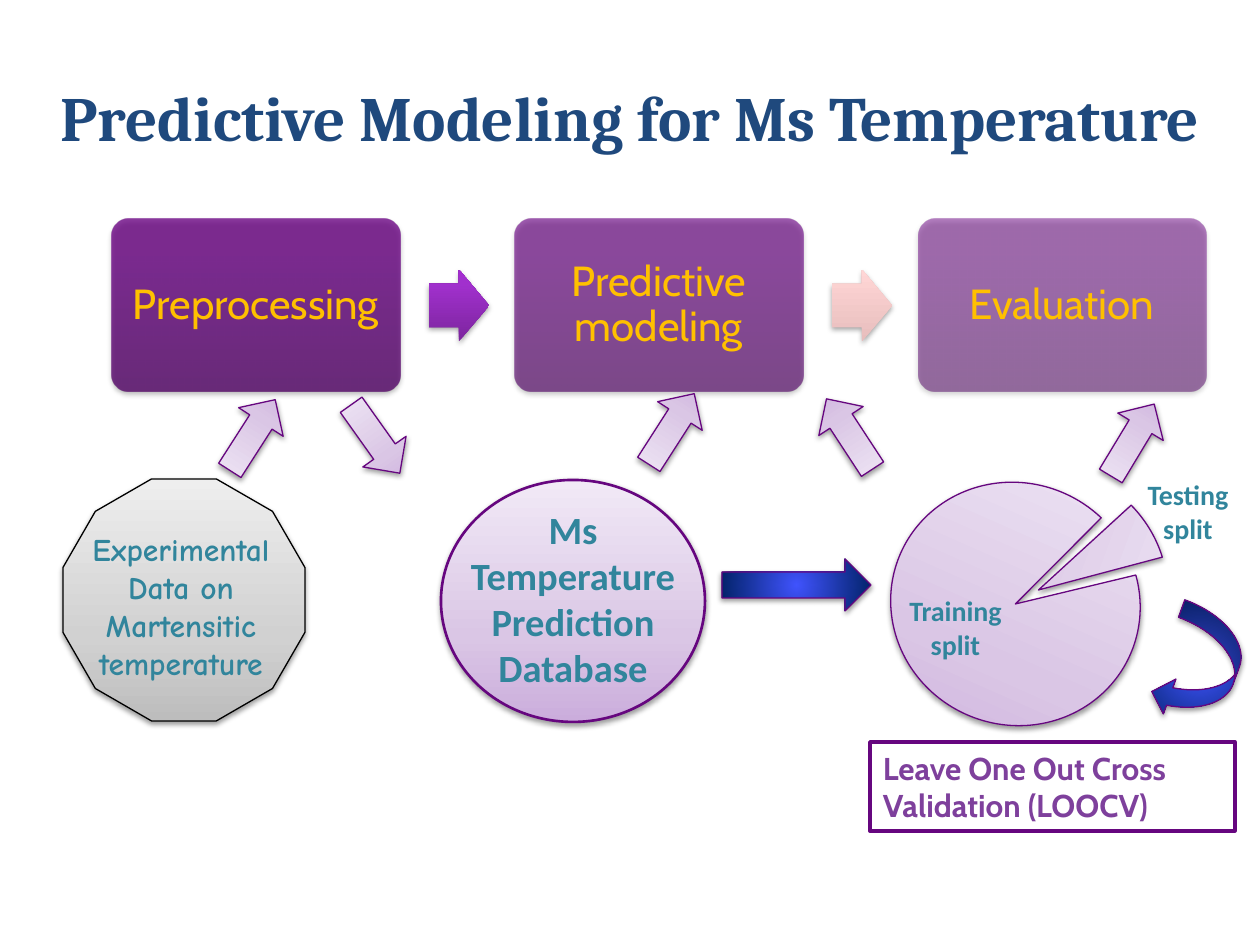
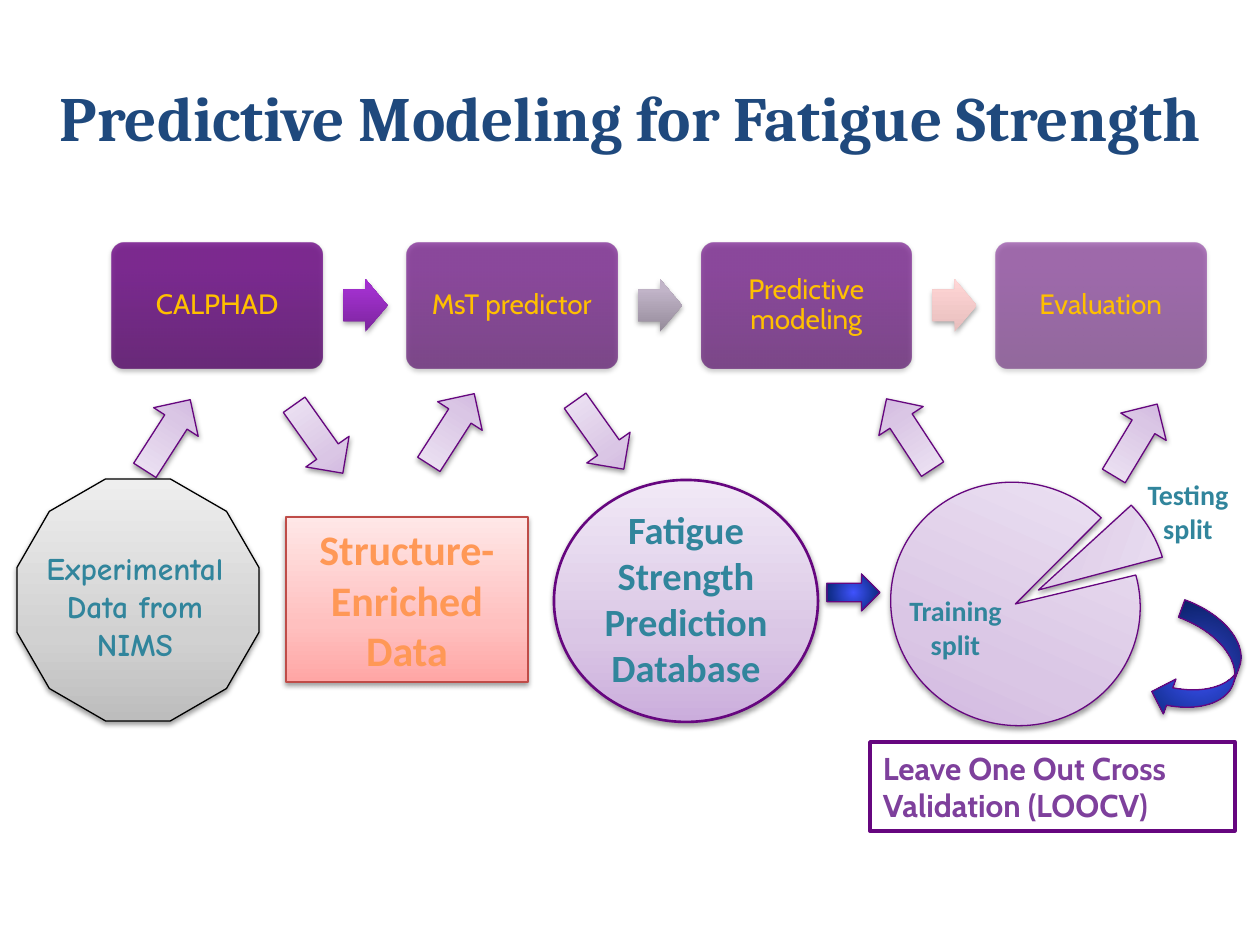
from pptx import Presentation
from pptx import util as u
from pptx.dml.color import RGBColor
from pptx.enum import shapes, text
from pptx.oxml import parse_xml
from pptx.oxml.ns import nsdecls, qn

EMU_PER_PX = 914400 / 126
WIDTH, HEIGHT = 1260, 945

NAVY = RGBColor(0x1F, 0x49, 0x7D)
GOLD = RGBColor(0xFF, 0xC0, 0x00)
TEAL = RGBColor(0x31, 0x85, 0x9C)
ORANGE = RGBColor(0xFF, 0x98, 0x56)
VIOLET = RGBColor(0x7E, 0x40, 0x9C)
PLUM = RGBColor(0x66, 0x06, 0x7F)
BRICK = RGBColor(0xBF, 0x4C, 0x48)
BLACK = RGBColor(0x00, 0x00, 0x00)
WHITE = RGBColor(0xFF, 0xFF, 0xFF)


def stops(**shades):
    return [(int(place[1:]), RGBColor.from_string(shade)) for place, shade in shades.items()]


CARD = stops(_0="510065", _80="690084", _100="690084")
PURPLE = stops(_0="7C259E", _80="A130CD", _100="A42DD1")
MAUVE = stops(_0="958B9A", _80="C1B4C8", _100="C2B5CA")
PINK = stops(_0="E8BEBD", _100="FFD6D6")
LILAC = stops(_0="CBADDC", _35="DAC6E5", _100="F1E9F6")
SILVER = stops(_0="BDBDBD", _35="D1D1D1", _100="EEEEEE")
ROSE = stops(_0="FFA6A5", _35="FFC0BF", _100="FFE7E7")
BLUE = stops(_0="4053FD", _100="002164")

UP, UP_STEEP, DOWN, BACK = 212.7, 211.1, 324.6, 146.8
FORM = shapes.MSO_SHAPE
CENTER, LEFT = text.PP_ALIGN.CENTER, text.PP_ALIGN.LEFT


def px(length):
    return u.Emu(round(length * EMU_PER_PX))


def write(frame, words, *, size, font, color, bold=True, align=CENTER,
          spacing=None, inset=(13, 6)):
    frame.word_wrap = True
    frame.vertical_anchor = text.MSO_ANCHOR.MIDDLE
    frame.margin_left = frame.margin_right = px(inset[0])
    frame.margin_top = frame.margin_bottom = px(inset[1])
    frame.text = words
    for paragraph in frame.paragraphs:
        paragraph.alignment = align
        if spacing:
            paragraph.line_spacing = spacing
        paragraph.font.size = u.Pt(size)
        paragraph.font.name = font
        paragraph.font.bold = bold
        paragraph.font.color.rgb = color


def label(slide, box, words, **style):
    frame = slide.shapes.add_textbox(*map(px, box)).text_frame
    write(frame, words, **style)


def shade(shape, gradient, opacity, radial):
    alpha = f'<a:alpha val="{opacity * 1000}"/>' if opacity < 100 else ""
    marks = "".join(
        f'<a:gs pos="{place * 1000}"><a:srgbClr val="{color}">{alpha}</a:srgbClr></a:gs>'
        for place, color in gradient)
    middle = '<a:fillToRect l="50000" t="50000" r="50000" b="50000"/>'
    course = (f'<a:path path="circle">{middle}</a:path>' if radial
              else '<a:lin ang="16200000" scaled="0"/>')
    shape.fill.background()
    properties = shape._element.spPr
    properties.replace(properties.find(qn("a:noFill")), parse_xml(
        f'<a:gradFill {nsdecls("a")} rotWithShape="1"><a:gsLst>{marks}</a:gsLst>{course}</a:gradFill>'))


def cast_shadow(shape, opacity):
    shape._element.spPr.find(qn("a:effectLst")).append(parse_xml(
        f'<a:outerShdw {nsdecls("a")} blurRad="{u.Pt(3.1)}" dist="{u.Pt(1.6)}" dir="5400000" '
        f'rotWithShape="0"><a:srgbClr val="{BLACK}"><a:alpha val="{opacity * 1000}"/>'
        '</a:srgbClr></a:outerShdw>'))


def draw(slide, form, box, fill, *, line=PLUM, weight=0.75, turn=0, adjust=(),
         opacity=100, radial=False, shadow=38):
    shape = slide.shapes.add_shape(form, *map(px, box))
    shape.rotation = turn
    for index, value in enumerate(adjust):
        shape.adjustments[index] = value
    if isinstance(fill, RGBColor):
        shape.fill.solid()
        shape.fill.fore_color.rgb = fill
    else:
        shade(shape, fill, opacity, radial)
    if line is None:
        shape.line.fill.background()
    else:
        shape.line.color.rgb = line
        shape.line.width = u.Pt(weight)
    shape.shadow.inherit = False
    if shadow:
        cast_shadow(shape, shadow)
    return shape


def add_title(slide, words):
    label(slide, (0, 38, WIDTH, 157), words, size=36, font="Cambria", color=NAVY)


def add_process(slide, box, steps, size):
    left, top, width, height = box
    middle = top + height / 2
    card_width = width / (1.4 * len(steps) - 0.4)
    card_height = 0.6 * card_width
    for index, (words, opacity, arrow) in enumerate(steps):
        x = left + 1.4 * card_width * index
        card_box = (x, middle - card_height / 2, card_width, card_height)
        draw(slide, FORM.ROUNDED_RECTANGLE, card_box, CARD,
             line=None, adjust=(0.1,), opacity=opacity, shadow=35)
        label(slide, card_box, words, size=size, font="Cabin", color=GOLD, bold=False,
              spacing=0.9, inset=(0.05 * card_width,) * 2)
        if arrow:
            arrow_height = 0.25 * card_width
            draw(slide, FORM.RIGHT_ARROW,
                 (x + 1.1 * card_width, middle - arrow_height / 2, 0.21 * card_width, arrow_height),
                 arrow, line=None, adjust=(0.6, 0.5), shadow=35)


def add_flow_arrows(slide, arrows):
    for x, y, turn in arrows:
        draw(slide, FORM.DOWN_ARROW, (x, y, 53, 84), LILAC, turn=turn)


def add_experiment(slide, box, words):
    left, top, width, height = box
    draw(slide, FORM.DODECAGON, box, SILVER, line=BLACK)
    label(slide, (left + 4, top + 6, width - 14, height), words,
          size=18, font="Comic Neue", color=TEAL)


def add_enriched_data(slide, box, words):
    panel = draw(slide, FORM.RECTANGLE, box, ROSE, line=BRICK)
    write(panel.text_frame, words, size=24, font="Calibri", color=ORANGE)


def add_database(slide, box, words):
    left, top, width, height = box
    draw(slide, FORM.OVAL, box, LILAC, weight=1.5)
    label(slide, (left - 5, top - 3, width + 10, height), words,
          size=22, font="Calibri", color=TEAL)


def add_split(slide, box):
    left, top, width, height = box

    def inside(x, y, w, h):
        return left + x, top + y, w, h

    draw(slide, FORM.PIE, inside(20, 23, 251, 242), LILAC, turn=23.9, adjust=(193.56, 174.6))
    draw(slide, FORM.PIE, inside(44, 0, 249, 260), LILAC, turn=110.4, adjust=(124.29, 140.85))
    for words, place in (("Training split", inside(12, 127, 147, 81)),
                         ("Testing\nsplit", inside(257, 11, 122, 81))):
        label(slide, place, words, size=16, font="Calibri", color=TEAL)
    draw(slide, FORM.CURVED_LEFT_ARROW, inside(293, 149, 74, 116), BLUE, turn=19.8, radial=True)
    validation = draw(slide, FORM.RECTANGLE, inside(0, height - 89, width, 89), WHITE,
                      weight=2, shadow=None)
    write(validation.text_frame, "Leave One Out Cross Validation (LOOCV)",
          size=18, font="Cabin", color=VIOLET, align=LEFT)


def add_model_slide(deck, *, title, steps, step_size, arrows, experiment, experiment_left,
                    database, database_left, feed, enriched=None):
    slide = deck.slides.add_slide(deck.slide_layouts[6])
    add_title(slide, title)
    add_process(slide, (112, 219, 1094, 173), steps, step_size)
    add_flow_arrows(slide, arrows)
    add_experiment(slide, (experiment_left, 479, 242, 242), experiment)
    if enriched:
        add_enriched_data(slide, (286, 517, 242, 165), enriched)
    add_database(slide, (database_left, 480, 264, 242), database)
    draw(slide, FORM.RIGHT_ARROW, feed, BLUE, radial=True)
    add_split(slide, (870, 460, 365, 371))


def main():
    deck = Presentation()
    deck.slide_width, deck.slide_height = px(WIDTH), px(HEIGHT)
    add_model_slide(
        deck,
        title="Predictive Modeling for Ms Temperature",
        steps=[("Preprocessing", 77, PURPLE), ("Predictive modeling", 63, PINK),
               ("Evaluation", 50, None)],
        step_size=24,
        arrows=[(226, 393, UP), (349, 397, DOWN), (645, 387, UP),
                (823, 392, BACK), (1106, 398, UP_STEEP)],
        experiment="Experimental Data on Martensitic temperature", experiment_left=63,
        database="Ms Temperature Prediction Database", database_left=441,
        feed=(722, 559, 149, 52))
    add_model_slide(
        deck,
        title="Predictive Modeling for Fatigue Strength",
        steps=[("CALPHAD", 77, PURPLE), ("MsT predictor", 63, MAUVE),
               ("Predictive modeling", 63, PINK), ("Evaluation", 50, None)],
        step_size=16,
        arrows=[(141, 393, UP), (292, 397, DOWN), (425, 387, UP), (573, 393, DOWN),
                (883, 392, BACK), (1109, 398, UP_STEEP)],
        experiment="Experimental Data from NIMS", experiment_left=17,
        enriched="Structure-Enriched Data",
        database="Fatigue Strength Prediction Database", database_left=554,
        feed=(827, 574, 53, 37))
    deck.save("out.pptx")


if __name__ == "__main__":
    main()
